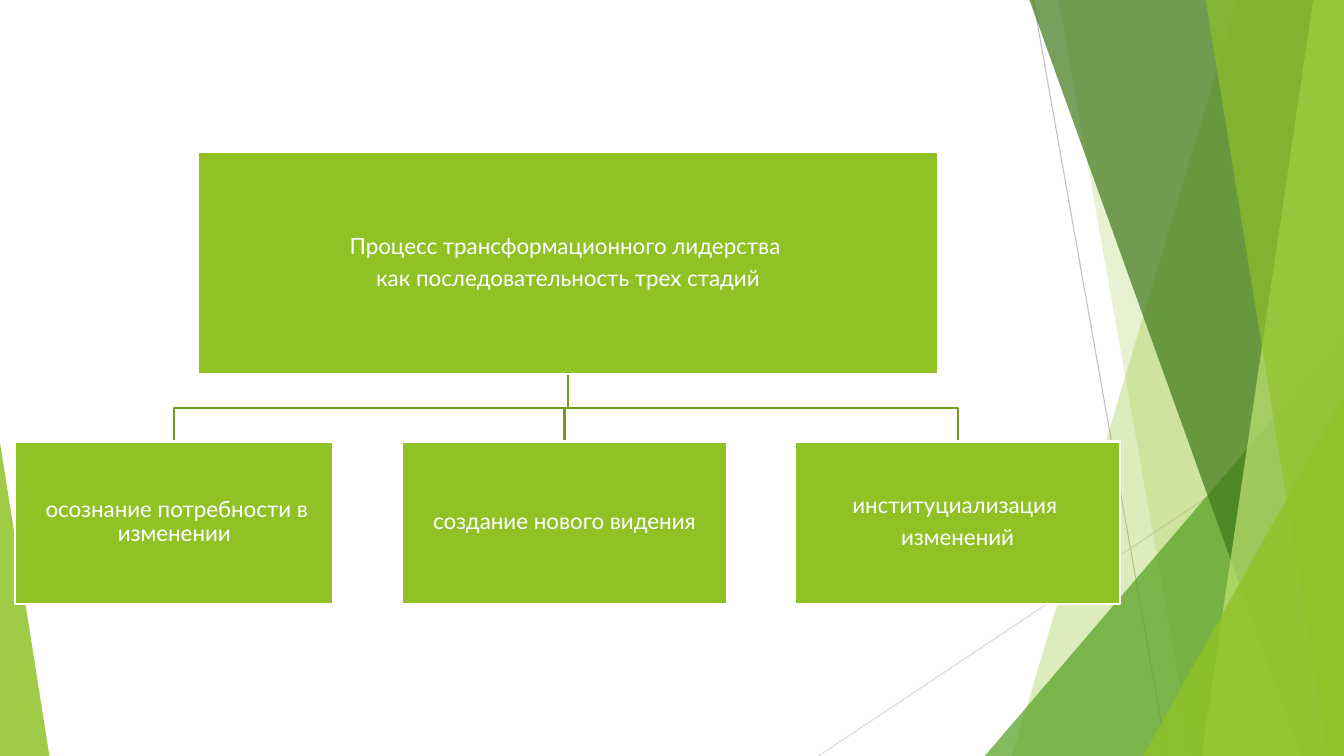
import pptx
import pptx.util
import pptx.dml.color
import pptx.enum.shapes
import pptx.enum.text
import pptx.oxml
import pptx.oxml.ns
import lxml.etree

Pt = pptx.util.Pt
SHAPE = pptx.enum.shapes.MSO_SHAPE

W, H = 960, 540
FONT = "Lato"
COLORS = {
    "lime": "90C226", "green": "54A021", "forest": "3F7819", "pale": "C0E474",
    "branch": "739B1E", "white": "FFFFFF", "gray": "BFBFBF", "light_gray": "D9D9D9",
}

ROOT = (141.12, 108.72, 529.2, 158.4, [
    [("Процесс трансформационного лидерства ", 16)],
    [("как последовательность трех стадий", 16)],
])
STAGE_TOP, STAGE_HEIGHT = 315.36, 115.92
STAGES = [
    (10.8, 227.52, [[(" ", 14), ("осознание потребности в изменении", 16)]]),
    (287.28, 231.84, [[("создание нового видения", 16)]]),
    (568.08, 231.84, [[("институциализация ", 16)], [("изменений", 16)]]),
]

HAIRLINES = [
    (738, 0, 833.76, H, "gray"),
    (W, 290.16, 584.64, H, "light_gray"),
]
DECOR = [
    ("band", (884.16, 722.88), "lime", 30),
    ("band", (756, 851.76), "lime", 20),
    ("triangle", (703.44, 239.76, 256.56, 1), "green", 72),
    ("band", (735.12, 929.52), "forest", 70),
    ("band", (938.16, 858.24), "pale", 70),
    ("band", (861.12, 948.96), "lime", 65),
    ("triangle", (816.48, 282.96, 143.52, 1), "lime", 80),
    ("triangle", (0, 316.08, 35.28, 0), "lime", 85),
]


def rgb(name):
    return pptx.dml.color.RGBColor.from_string(COLORS[name])


def fill(sp, name, opacity=100):
    sp.shadow.inherit = False
    sp.fill.solid()
    sp.fill.fore_color.rgb = rgb(name)
    if opacity < 100:
        clr = sp.fill._xPr.find(".//" + pptx.oxml.ns.qn("a:srgbClr"))
        alpha = lxml.etree.SubElement(clr, pptx.oxml.ns.qn("a:alpha"))
        alpha.set("val", str(opacity * 1000))


def outline(sp, name, width):
    sp.line.color.rgb = rgb(name)
    sp.line.width = Pt(width)


def polygon(s, points, close):
    points = [(Pt(x), Pt(y)) for x, y in points]
    builder = s.shapes.build_freeform(*points[0])
    builder.add_line_segments(points[1:], close=close)
    return builder.convert_to_shape()


def add_hairline(s, x1, y1, x2, y2, color):
    line = s.shapes.add_connector(
        pptx.enum.shapes.MSO_CONNECTOR.STRAIGHT, Pt(x1), Pt(y1), Pt(x2), Pt(y2))
    outline(line, color, 0.75)
    lxml.etree.SubElement(line._element.spPr, pptx.oxml.ns.qn("a:effectLst"))


def add_decor(s, kind, geometry, color, opacity):
    if kind == "band":
        top_x, bottom_x = geometry
        sp = polygon(s, [(top_x, -0.72), (W, -0.72), (W, H), (bottom_x, H)], True)
    else:
        x, y, width, apex = geometry
        sp = s.shapes.add_shape(
            SHAPE.ISOSCELES_TRIANGLE, Pt(x), Pt(y), Pt(width), Pt(H - y))
        sp.adjustments[0] = apex
    fill(sp, color, opacity)
    sp.line.fill.background()


def add_branch(s, start_x, start_y, end_x, end_y):
    mid_y = (start_y + end_y) / 2
    sp = polygon(s, [(start_x, start_y), (start_x, mid_y),
                     (end_x, mid_y), (end_x, end_y)], False)
    sp.shadow.inherit = False
    sp.fill.background()
    outline(sp, "branch", 1.5)


def add_box(s, x, y, width, height, paragraphs):
    sp = s.shapes.add_shape(SHAPE.RECTANGLE, Pt(x), Pt(y), Pt(width), Pt(height))
    fill(sp, "lime")
    outline(sp, "white", 1.5)
    tf = sp.text_frame
    tf.word_wrap = True
    tf.vertical_anchor = pptx.enum.text.MSO_ANCHOR.MIDDLE
    tf.margin_left = tf.margin_right = tf.margin_top = tf.margin_bottom = Pt(0.8)
    for i, runs in enumerate(paragraphs):
        p = tf.add_paragraph() if i else tf.paragraphs[0]
        p.alignment = pptx.enum.text.PP_ALIGN.CENTER
        p.line_spacing = 0.9
        p.space_after = Pt(5.6)
        for text, size in runs:
            r = p.add_run()
            r.text = text
            r.font.name = FONT
            r.font.size = Pt(size)
            r.font.color.rgb = rgb("white")


def main():
    prs = pptx.Presentation()
    prs.slide_width, prs.slide_height = Pt(W), Pt(H)
    s = prs.slides.add_slide(prs.slide_layouts[6])
    for hairline in HAIRLINES:
        add_hairline(s, *hairline)
    for part in DECOR:
        add_decor(s, *part)
    x, y, width, height, _ = ROOT
    for stage_x, stage_width, _ in reversed(STAGES):
        add_branch(s, x + width / 2, y + height, stage_x + stage_width / 2, STAGE_TOP)
    add_box(s, *ROOT)
    for stage_x, stage_width, paragraphs in STAGES:
        add_box(s, stage_x, STAGE_TOP, stage_width, STAGE_HEIGHT, paragraphs)
    prs.save("out.pptx")


if __name__ == "__main__":
    main()
